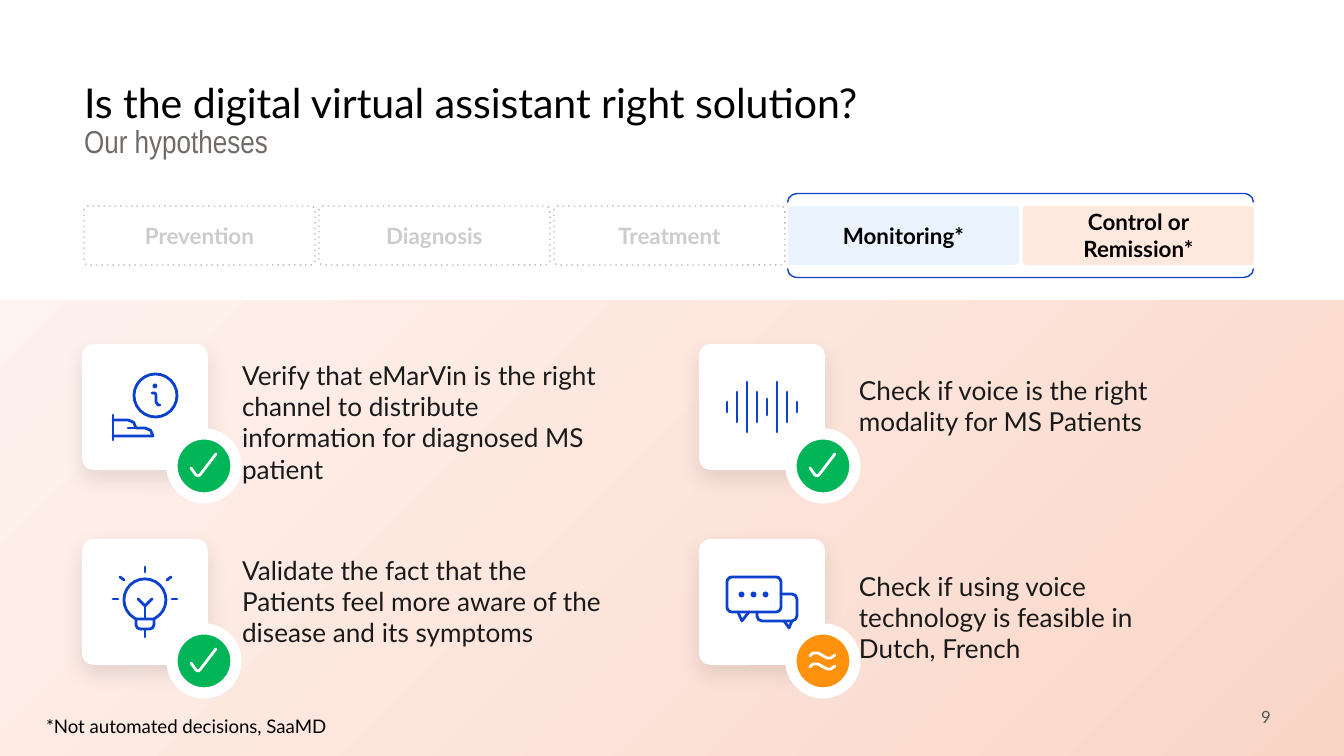
"""Build the slide on hypotheses for a digital virtual assistant."""
from dataclasses import dataclass
from math import cos, radians, sin

from lxml import etree
from pptx import Presentation
from pptx import util as u
from pptx.dml.color import RGBColor
from pptx.enum import dml, shapes, text
from pptx.oxml.ns import qn

EMU_PER_PX = 914400 / 134.4
SHAPE = shapes.MSO_SHAPE
LEFT, CENTER, RIGHT = text.PP_ALIGN.LEFT, text.PP_ALIGN.CENTER, text.PP_ALIGN.RIGHT
TOP, MIDDLE = text.MSO_ANCHOR.TOP, text.MSO_ANCHOR.MIDDLE
COLORS = {
    "white": "FFFFFF", "black": "000000", "body": "1A1A1A", "subtitle": "706B69",
    "number": "545859", "blue": "0B41CD", "green": "00B458", "orange": "FF910C",
    "muted": "CCCCCC", "dots": "B7B7B7", "sky": "EBF3FF", "peach": "FFE8DE",
    "bg_start": "FFF7F5", "bg_end": "FAD6C7",
}
Points = list[tuple[float, float]]


@dataclass
class Box:
    x: int
    y: int
    w: int
    h: int


@dataclass
class Style:
    size: int
    color: str
    font: str = "Lato"
    bold: bool = False
    align: text.PP_ALIGN = LEFT
    anchor: text.MSO_ANCHOR = TOP


@dataclass
class Stroke:
    points: Points


@dataclass
class Outline:
    kind: shapes.MSO_SHAPE
    box: Box
    adjustments: tuple[float, ...] = ()


@dataclass
class Card:
    x: int
    y: int
    icon: list[Stroke | Outline]
    label: str
    label_box: Box
    badge_x: int
    badge_color: str
    mark: list[Stroke]
    space_after: int


@dataclass
class Stage:
    label: str
    fill: str = ""


def px(n: float) -> u.Emu:
    return u.Emu(round(n * EMU_PER_PX))


def rgb(name: str) -> RGBColor:
    return RGBColor.from_string(COLORS[name])


def corner(cx: int, cy: int, r: int, start: int, turn: int = 90) -> Points:
    angles = [radians(start + turn * i / 2) for i in range(3)]
    return [(cx + r * cos(a), cy + r * sin(a)) for a in angles]


def wave(y: int) -> Stroke:
    offsets = ((-13, 0), (-10, -3), (-5, -3), (4, 2), (8, 2), (12, -1))
    return Stroke([(x, y + dy) for x, dy in offsets])


def write(sp, box: Box, label: str, st: Style, insets=(13, 13, 13, 13)):
    sp.left, sp.top, sp.width, sp.height = map(px, (box.x, box.y, box.w, box.h))
    tf = sp.text_frame
    tf.text = label
    tf.word_wrap, tf.auto_size = True, text.MSO_AUTO_SIZE.NONE
    tf.vertical_anchor = st.anchor
    tf.margin_left, tf.margin_top, tf.margin_right, tf.margin_bottom = map(px, insets)
    p = tf.paragraphs[0]
    p.alignment, p.space_before = st.align, u.Pt(0)
    f = p.runs[0].font
    f.name, f.size, f.bold = st.font, u.Pt(st.size), st.bold
    f.color.rgb = rgb(st.color)
    return p


def add_text(s, box: Box, label: str, st: Style, insets=(13, 13, 13, 13)):
    return write(s.shapes.add_textbox(0, 0, 0, 0), box, label, st, insets)


def add_shape(s, kind, box: Box, fill: str = "", line: str = "", width: float = 0):
    sp = s.shapes.add_shape(kind, *map(px, (box.x, box.y, box.w, box.h)))
    sp.shadow.inherit = False
    if fill:
        sp.fill.solid()
        sp.fill.fore_color.rgb = rgb(fill)
    else:
        sp.fill.background()
    if line:
        sp.line.color.rgb, sp.line.width = rgb(line), u.Pt(width)
    else:
        sp.line.fill.background()
    return sp


def add_stroke(s, stroke: Stroke, color: str, dx: int = 0, dy: int = 0) -> None:
    pts = [(px(x + dx), px(y + dy)) for x, y in stroke.points]
    if len(pts) == 2:
        sp = s.shapes.add_connector(shapes.MSO_CONNECTOR.STRAIGHT, *pts[0], *pts[1])
    else:
        fb = s.shapes.build_freeform(*pts[0])
        fb.add_line_segments(pts[1:], close=False)
        sp = fb.convert_to_shape()
        sp.fill.background()
    sp.line.color.rgb, sp.line.width = rgb(color), u.Pt(1.5)
    props = sp._element.spPr
    props.find(qn("a:ln")).set("cap", "rnd")
    etree.SubElement(props, qn("a:effectLst"))


def add_icon(s, parts: list[Stroke | Outline]) -> None:
    for part in parts:
        if isinstance(part, Stroke):
            add_stroke(s, part, "blue")
            continue
        sp = add_shape(s, part.kind, part.box, "", "blue", 1.5)
        for i, value in enumerate(part.adjustments):
            sp.adjustments[i] = value


def add_soft_shadow(sp) -> None:
    effects = sp._element.spPr.find(qn("a:effectLst"))
    shadow = etree.SubElement(effects, qn("a:outerShdw"), blurRad=str(u.Pt(11.2)),
                              dist=str(u.Pt(4.5)), dir="5400000", algn="t", rotWithShape="0")
    color = etree.SubElement(shadow, qn("a:srgbClr"), val=COLORS["black"])
    etree.SubElement(color, qn("a:alpha"), val="10000")


def add_card(s, card: Card) -> None:
    sp = add_shape(s, SHAPE.ROUNDED_RECTANGLE, Box(card.x, card.y, 122, 122), "white", "white", 2.25)
    sp.adjustments[0] = 0.08
    add_soft_shadow(sp)
    p = add_text(s, card.label_box, card.label, Style(14, "body"))
    p.space_after = u.Pt(card.space_after)
    add_icon(s, card.icon)
    cy = card.y + 120
    add_shape(s, SHAPE.OVAL, Box(card.badge_x - 32, cy - 32, 64, 64), card.badge_color, "white", 6)
    for stroke in card.mark:
        add_stroke(s, stroke, "white", card.badge_x, cy)


def add_stage(s, stage: Stage, x: int) -> None:
    box = Box(x, 206, 231, 59)
    line = "" if stage.fill else "dots"
    sp = add_shape(s, SHAPE.ROUNDED_RECTANGLE, box, stage.fill, line, 0.75)
    sp.adjustments[0] = 0.07
    if line:
        sp.line.dash_style = dml.MSO_LINE.ROUND_DOT
        sp._element.spPr.find(".//" + qn("a:prstDash")).set("val", "dot")
    color = "black" if stage.fill else "muted"
    write(sp, box, stage.label, Style(12, color, bold=True, align=CENTER, anchor=MIDDLE))


INFO = [
    Outline(SHAPE.OVAL, Box(134, 374, 43, 43)), Outline(SHAPE.OVAL, Box(154, 385, 2, 2)),
    Stroke([(152, 393), (155, 393), (156, 395), (156, 402), (158, 405), (160, 405)]),
    Stroke([(113, 415), (113, 440)]),
    Stroke([(113, 436), *corner(145, 436, 8, 0, -90), *corner(128, 428, 8, 0, -90), (113, 420)]),
    Stroke([(128, 428), (136, 428)]),
]
BULB = [Outline(SHAPE.CHORD, Box(124, 579, 42, 42), (69, 39)),
        Stroke([(154, 619), *corner(150, 625, 4, 0), *corner(140, 625, 4, 90), (136, 619)]),
        Stroke([(138, 599), (145, 606), (152, 599)])]
BULB += [Stroke([(a, b), (c, d)]) for a, b, c, d in (
    (145, 567, 145, 572), (113, 599, 118, 599), (177, 599, 172, 599), (120, 577, 124, 580),
    (171, 577, 167, 580), (145, 629, 145, 637), (145, 606, 145, 618))]
VOICE = [Stroke([(727 + 10 * i, 407 - h), (727 + 10 * i, 407 + h)])
         for i, h in enumerate((5, 15, 25, 15, 8, 25, 15, 5))]
CHAT = [
    Outline(SHAPE.ROUNDED_RECTANGLE, Box(727, 577, 54, 35), (0.14,)),
    Stroke([(757, 612), *corner(762, 616, 5, 180, -90), *corner(792, 616, 5, 90, -90),
            *corner(792, 599, 5, 0, -90), (781, 594)]),
    Stroke([(792, 621), (789, 628), (784, 621)]),
    Stroke([(738, 612), (742, 621), (749, 612)]),
    *[Outline(SHAPE.OVAL, Box(x, 593, 3, 3)) for x in (740, 752, 764)],
]
CHECK = [Stroke([(-13, 2), (-8, 9), (-6, 10), (-4, 9), (12, -12)])]
APPROX = [wave(-5), wave(6)]
CARDS = [
    Card(84, 346, INFO, "Verify that eMarVin is the right channel to distribute information for "
         "diagnosed MS patient", Box(229, 346, 388, 122), 204, "green", CHECK, 10),
    Card(84, 541, BULB, "Validate the fact that the Patients feel more aware of the disease and "
         "its symptoms", Box(229, 541, 388, 122), 204, "green", CHECK, 10),
    Card(701, 346, VOICE, "Check if voice is the right modality for MS Patients",
         Box(846, 361, 372, 90), 823, "green", CHECK, 12),
    Card(701, 541, CHAT, "Check if using voice technology is feasible in Dutch, French",
         Box(846, 557, 372, 90), 823, "orange", APPROX, 12),
]
STAGES = [Stage("Prevention"), Stage("Diagnosis"), Stage("Treatment"),
          Stage("Monitoring*", "sky"), Stage("Control or Remission*", "peach")]


def main() -> None:
    prs = Presentation()
    prs.slide_width, prs.slide_height = px(1344), px(756)
    s = prs.slides.add_slide(prs.slide_layouts[0])
    fill = s.background.fill
    fill.gradient()
    fill.gradient_angle = 315
    for stop, name in zip(fill.gradient_stops, ("bg_start", "bg_end")):
        stop.color.rgb = rgb(name)
    add_shape(s, SHAPE.RECTANGLE, Box(0, 0, 1344, 300), "white")
    title, subtitle = s.placeholders
    for sp in (title, subtitle):
        s.shapes._spTree.append(sp._element)
    write(title, Box(84, 64, 1093, 85), "Is the digital virtual assistant right solution?",
          Style(22, "black"), (0, 13, 13, 13))
    p = write(subtitle, Box(84, 107, 1093, 65), "Our hypotheses",
              Style(17, "subtitle", "Arial Narrow"), (0, 13, 13, 13))
    p.line_spacing = 1.05
    for card in CARDS:
        add_card(s, card)
    for i, stage in enumerate(STAGES):
        add_stage(s, stage, 84 + round(i * 234.75))
    for y, angle in ((40, 270), (-35, 90)):
        sp = add_shape(s, SHAPE.LEFT_BRACKET, Box(1016, y, 9, 466), "", "blue", 0.75)
        sp.rotation, sp.adjustments[0] = angle, 1.11
    add_text(s, Box(33, 703, 711, 46), "*Not automated decisions, SaaMD",
             Style(10, "black", anchor=MIDDLE))
    add_text(s, Box(1213, 700, 71, 24), "9", Style(9, "number", align=RIGHT), (13, 7, 13, 7))
    prs.save("out.pptx")


if __name__ == "__main__":
    main()
